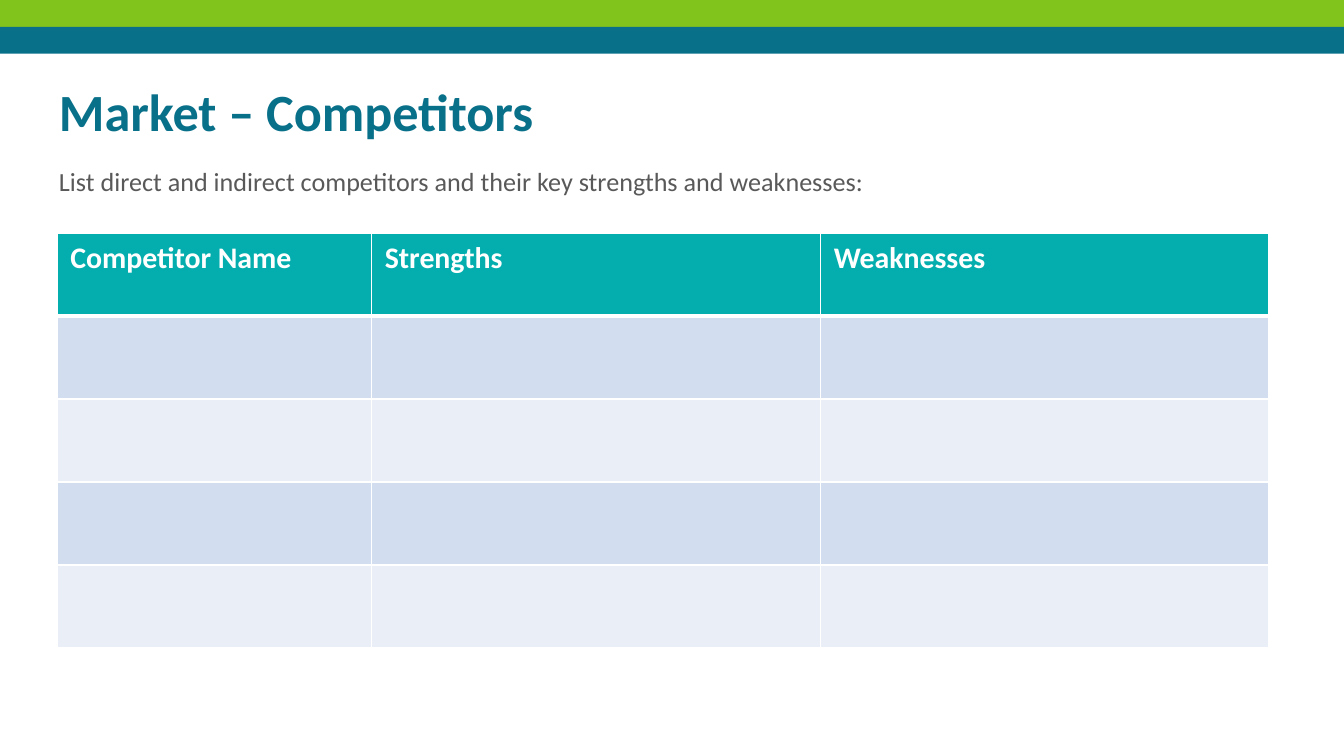
"""Build the competitor overview slide with its empty strengths and weaknesses table."""
from dataclasses import dataclass

from lxml.etree import SubElement
from pptx import Presentation
from pptx.dml.color import RGBColor as RGB
from pptx.enum.shapes import MSO_SHAPE as SHAPE
from pptx.oxml.ns import qn
from pptx.util import Pt


@dataclass(frozen=True)
class Theme:
    font: str = "Calibri"
    green: str = "80C41C"
    blue: str = "09708A"
    teal: str = "05AEAE"
    grey: str = "595959"
    white: str = "FFFFFF"
    bands: tuple = ("D2DEEF", "EAEFF7")
    title_size: int = 28
    intro_size: int = 14
    header_size: int = 16


theme = Theme()


def write(frame, text, size, color, bold=False):
    frame.word_wrap = True
    paragraph = frame.paragraphs[0]
    paragraph.text = text
    font = paragraph.font
    font.name, font.size, font.bold = theme.font, Pt(size), bold
    font.color.rgb = RGB.from_string(color)


def add_border(cell, side, width):
    line = SubElement(cell._tc.get_or_add_tcPr(), qn(f"a:{side}"), w=str(Pt(width)))
    fill = SubElement(line, qn("a:solidFill"))
    SubElement(fill, qn("a:srgbClr"), val=theme.white)


deck = Presentation()
deck.slide_width, deck.slide_height = Pt(720), Pt(405)
slide = deck.slides.add_slide(deck.slide_layouts[6])

stripe_height = 14.4
for index, color in enumerate((theme.green, theme.blue)):
    stripe = slide.shapes.add_shape(
        SHAPE.RECTANGLE, 0, Pt(index * stripe_height), deck.slide_width, Pt(stripe_height))
    stripe.shadow.inherit = False
    stripe.fill.solid()
    stripe.fill.fore_color.rgb = RGB.from_string(color)
    stripe.line.fill.background()

title = slide.shapes.add_textbox(Pt(24.5), Pt(35.3), Pt(671), Pt(45.4)).text_frame
title.margin_left = title.margin_right = title.margin_top = title.margin_bottom = Pt(7.2)
write(title, "Market – Competitors", theme.title_size, theme.blue, bold=True)

intro = slide.shapes.add_textbox(Pt(24.5), Pt(85), Pt(668), Pt(30)).text_frame
write(intro, "List direct and indirect competitors and their key strengths and weaknesses:",
      theme.intro_size, theme.grey)

headings = ("Competitor Name", "Strengths", "Weaknesses")
column_widths = (168.5, 240.5, 240.5)
row_count, row_height = 5, 44.5
competitors = slide.shapes.add_table(
    row_count, len(headings), Pt(30.5), Pt(124.8),
    Pt(sum(column_widths)), Pt(row_count * row_height)).table
for column, width in zip(competitors.columns, column_widths):
    column.width = Pt(width)

for row_index, row in enumerate(competitors.rows):
    row.height = Pt(row_height)
    band = theme.bands[(row_index - 1) % 2] if row_index else theme.teal
    top_width = 3 if row_index == 1 else 1
    bottom_width = 3 if row_index == 0 else 1
    for cell, heading in zip(row.cells, headings):
        for side, width in (("lnL", 1), ("lnR", 1), ("lnT", top_width), ("lnB", bottom_width)):
            add_border(cell, side, width)
        cell.fill.solid()
        cell.fill.fore_color.rgb = RGB.from_string(band)
        if row_index == 0:
            write(cell.text_frame, heading, theme.header_size, theme.white, bold=True)

deck.save("out.pptx")
